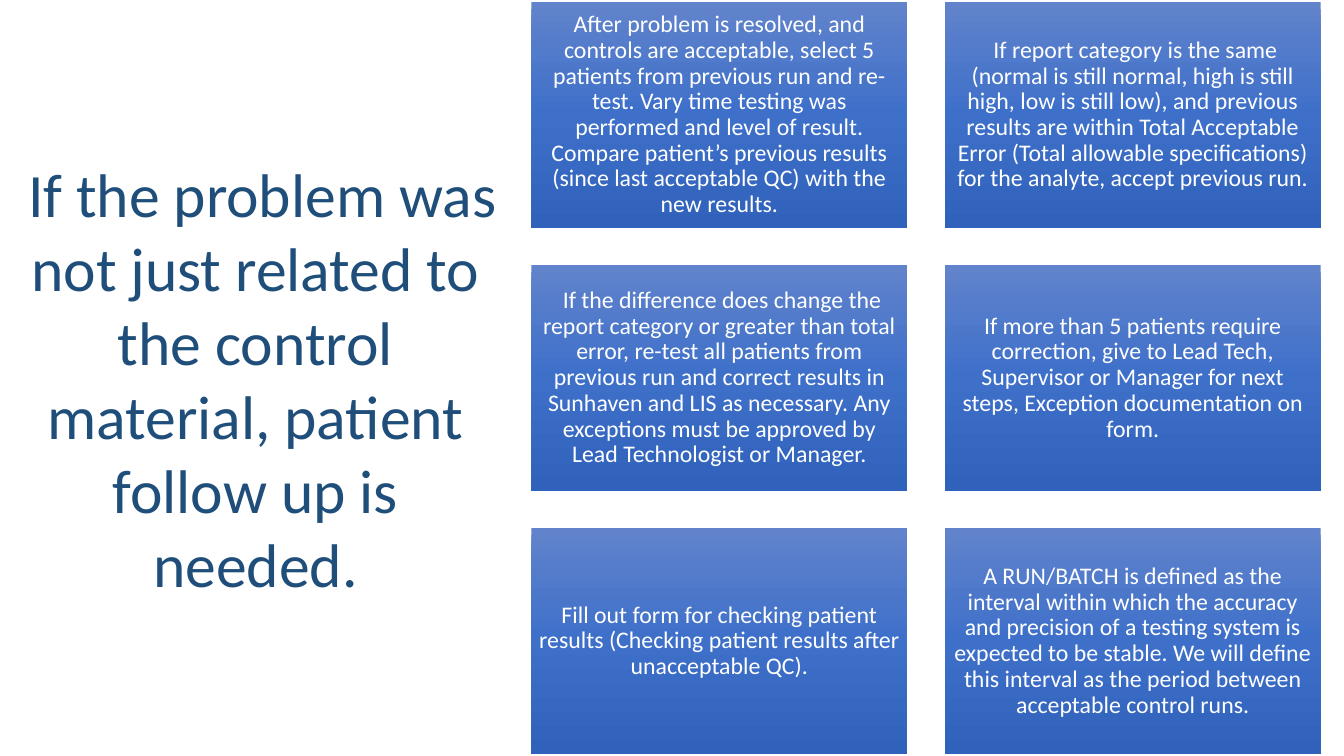
from copy import deepcopy

from pptx import Presentation
from pptx.dml.color import RGBColor
from pptx.enum.shapes import MSO_SHAPE
from pptx.enum.text import MSO_ANCHOR, MSO_AUTO_SIZE, PP_ALIGN
from pptx.oxml.ns import qn
from pptx.util import Inches, Pt

FONT = "Calibri"
TITLE = ("\u00a0If the problem\u00a0was not just related to the control material, "
         "patient follow up is needed.")
STEPS = [
    "After problem is resolved, and controls are acceptable, select 5 patients from "
    "previous run and re-test. Vary time testing was performed and level of result. "
    "Compare patient’s previous results (since last acceptable QC) with the new results.",
    "\u00a0If report category is the same (normal is still normal, high is still high, "
    "low is still low), and previous results are within Total Acceptable Error (Total "
    "allowable specifications) for the analyte, accept previous run.",
    "\u00a0If the difference does change the report category or greater than total error, "
    "re-test all patients from previous run and correct results in Sunhaven and LIS as "
    "necessary. Any exceptions must be approved by Lead Technologist or Manager.",
    "If more than 5 patients require correction, give to Lead Tech, Supervisor or Manager "
    "for next steps, Exception documentation on form.",
    "Fill out form for checking patient results (Checking patient results after "
    "unacceptable QC).",
    "A RUN/BATCH is defined as the interval within which the accuracy and precision of a "
    "testing system is expected to be stable. We will define this interval as the period "
    "between acceptable control runs.",
]
GRADIENT = [(0, "6183CB"), (0.5, "3E70CA"), (1, "3062BB")]


def color(value):
    """Return the colour for a hex string."""
    return RGBColor.from_string(value)


def write_text(shape, text, size, text_color):
    """Write one centred paragraph in the shape and return it."""
    frame = shape.text_frame
    frame.word_wrap = True
    frame.auto_size = MSO_AUTO_SIZE.NONE
    frame.vertical_anchor = MSO_ANCHOR.MIDDLE
    paragraph = frame.paragraphs[0]
    paragraph.alignment = PP_ALIGN.CENTER
    run = paragraph.add_run()
    run.text = text
    run.font.name = FONT
    run.font.size = Pt(size)
    run.font.color.rgb = color(text_color)
    return paragraph


def fill_gradient(shape):
    """Fill the shape with the vertical three-stop blue gradient."""
    fill = shape.fill
    fill.gradient()
    fill.gradient_angle = 270
    stop_list = shape.element.spPr.find(qn("a:gradFill")).find(qn("a:gsLst"))
    stop_list.append(deepcopy(stop_list[0]))
    for stop, (position, value) in zip(fill.gradient_stops, GRADIENT):
        stop.position = position
        stop.color.rgb = color(value)


def place_title(slide, left, top, width, height):
    """Place the title in the given box."""
    title = slide.shapes.title
    title.left, title.top = Inches(left), Inches(top)
    title.width, title.height = Inches(width), Inches(height)
    write_text(title, TITLE, 44, "1E4E79")


def add_step(slide, text, left, top, width, height):
    """Add one step card in the given box."""
    card = slide.shapes.add_shape(
        MSO_SHAPE.RECTANGLE, Inches(left), Inches(top), Inches(width), Inches(height))
    card.shadow.inherit = False
    card.line.fill.background()
    fill_gradient(card)
    paragraph = write_text(card, text, 17, "FFFFFF")
    paragraph.line_spacing = 0.9
    paragraph.space_after = Pt(6)
    frame = card.text_frame
    frame.margin_left = frame.margin_right = Inches(0.07)
    frame.margin_top = frame.margin_bottom = Inches(0.07)


def add_step_grid(slide, left, top, width, height, columns=2, gap=0.37):
    """Lay the steps out row by row in the given box."""
    rows = len(STEPS) // columns
    card_width = (width - gap * (columns - 1)) / columns
    card_height = (height - gap * (rows - 1)) / rows
    for index, text in enumerate(STEPS):
        row, column = divmod(index, columns)
        add_step(slide, text, left + column * (card_width + gap),
                 top + row * (card_height + gap), card_width, card_height)


def main():
    """Build and save the presentation."""
    presentation = Presentation()
    presentation.slide_width = Inches(13.33)
    presentation.slide_height = Inches(7.5)
    slide = presentation.slides.add_slide(presentation.slide_layouts[5])
    place_title(slide, 0, 0, 5.07, 7.5)
    add_step_grid(slide, 5.27, 0.02, 7.83, 7.46)
    presentation.save("out.pptx")


if __name__ == "__main__":
    main()
